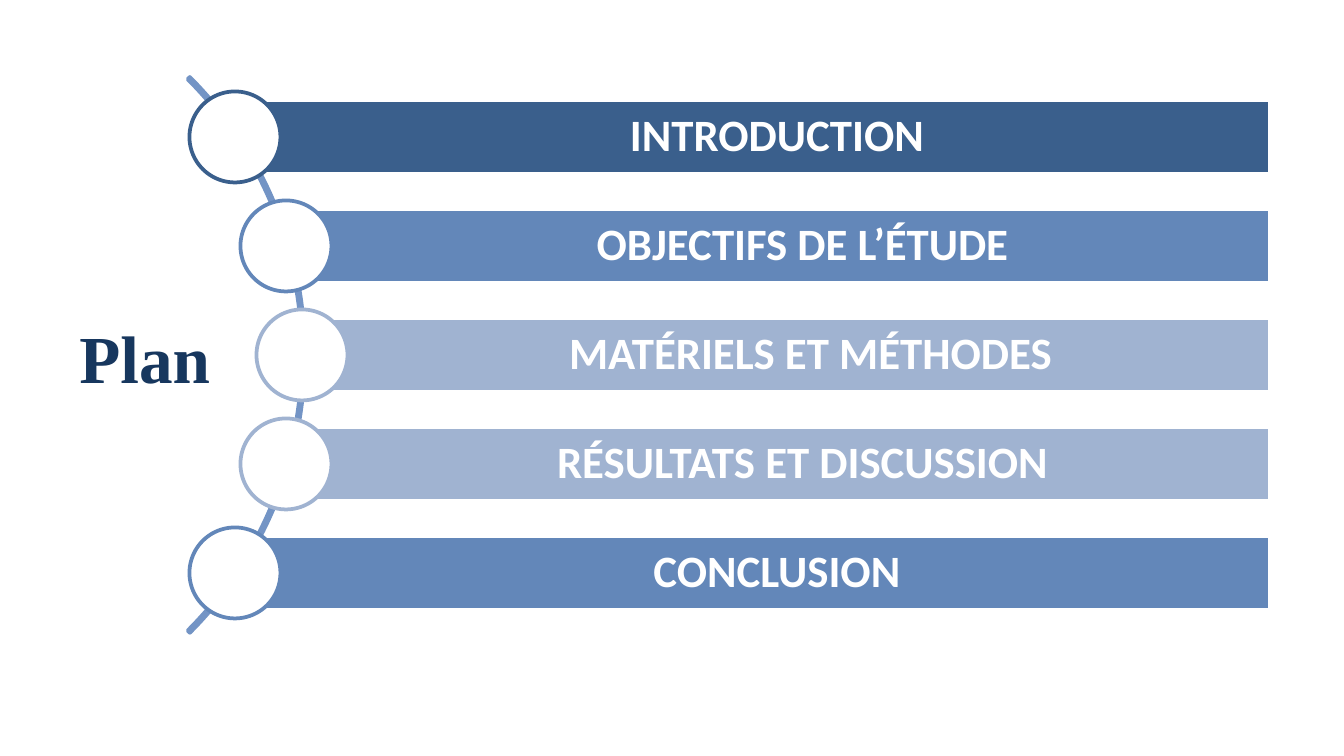
from math import sqrt

from pptx import Presentation
from pptx.dml.color import RGBColor
from pptx.enum.shapes import MSO_SHAPE
from pptx.enum.text import MSO_ANCHOR, MSO_AUTO_SIZE, PP_ALIGN
from pptx.util import Pt

EMU_PER_PX = 9144000 / 1344
RECT, OVAL, ARC = MSO_SHAPE.RECTANGLE, MSO_SHAPE.OVAL, MSO_SHAPE.BLOCK_ARC
LEFT, CENTER = PP_ALIGN.LEFT, PP_ALIGN.CENTER
TOP, MIDDLE = MSO_ANCHOR.TOP, MSO_ANCHOR.MIDDLE
FIT_SHAPE = MSO_AUTO_SIZE.SHAPE_TO_FIT_TEXT

COLORS = {
    "white": "FFFFFF",
    "navy": "17375E",
    "arc": "7394C5",
    "dark": "3A5F8C",
    "medium": "6387B9",
    "light": "A0B3D1",
}
SECTIONS = [
    ("INTRODUCTION", "dark"),
    ("OBJECTIFS DE L’ÉTUDE", "medium"),
    ("MATÉRIELS ET MÉTHODES", "light"),
    ("RÉSULTATS ET DISCUSSION", "light"),
    ("CONCLUSION", "medium"),
]
ARC_X, ARC_Y, ARC_SIZE = -88, 355, 786
CURVE_RADIUS = 390
PITCH = 109
BAR_RIGHT, BAR_HEIGHT = 1270, 73
CIRCLE_SIZE = 91


def px(n):
    return round(n * EMU_PER_PX)


def color(name):
    return RGBColor.from_string(COLORS[name])


def add_shape(s, kind, x, y, w, h, fill, line):
    shape = s.shapes.add_shape(kind, px(x), px(y), px(w), px(h))
    shape.shadow.inherit = False
    if fill:
        shape.fill.solid()
        shape.fill.fore_color.rgb = color(fill)
    else:
        shape.fill.background()
    shape.line.color.rgb = color(line)
    shape.line.width = Pt(2)
    return shape


def set_text(tf, text, font, size, fill, align, anchor):
    tf.vertical_anchor = anchor
    p = tf.paragraphs[0]
    p.text = text
    p.alignment = align
    p.font.name = font
    p.font.size = Pt(size)
    p.font.bold = True
    p.font.color.rgb = color(fill)
    return p


def add_title(s, text):
    title = s.shapes.title
    title.left, title.top, title.width, title.height = px(66), px(310), px(159), px(95)
    tf = title.text_frame
    tf.word_wrap = False
    tf.auto_size = FIT_SHAPE
    set_text(tf, text, "Times New Roman", 36, "navy", LEFT, TOP)


def add_arc(s):
    half = ARC_SIZE // 2
    arc = add_shape(s, ARC, ARC_X - half, ARC_Y - half, ARC_SIZE, ARC_SIZE, None, "arc")
    for i, value in enumerate((189, 27, 0.004)):
        arc.adjustments[i] = value


def add_section(s, text, fill, offset):
    """Add a bar and its circle, centred on the curve at offset px from its middle."""
    x = round(ARC_X + sqrt(CURVE_RADIUS ** 2 - offset ** 2))
    y = ARC_Y + offset
    bar = add_shape(s, RECT, x, y - BAR_HEIGHT / 2, BAR_RIGHT - x, BAR_HEIGHT, fill, "white")
    tf = bar.text_frame
    tf.word_wrap = True
    tf.margin_left = px(58)
    tf.margin_top = tf.margin_right = tf.margin_bottom = px(9)
    p = set_text(tf, text, "Calibri", 24, "white", CENTER, MIDDLE)
    p.line_spacing = 0.9
    half = CIRCLE_SIZE / 2
    add_shape(s, OVAL, x - half, y - half, CIRCLE_SIZE, CIRCLE_SIZE, "white", fill)


def main():
    prs = Presentation()
    prs.slide_width, prs.slide_height = px(1344), px(756)
    s = prs.slides.add_slide(prs.slide_layouts[5])
    add_title(s, "Plan")
    add_arc(s)
    middle = len(SECTIONS) // 2
    for i, (text, fill) in enumerate(SECTIONS):
        add_section(s, text, fill, (i - middle) * PITCH)
    prs.save("out.pptx")


if __name__ == "__main__":
    main()
